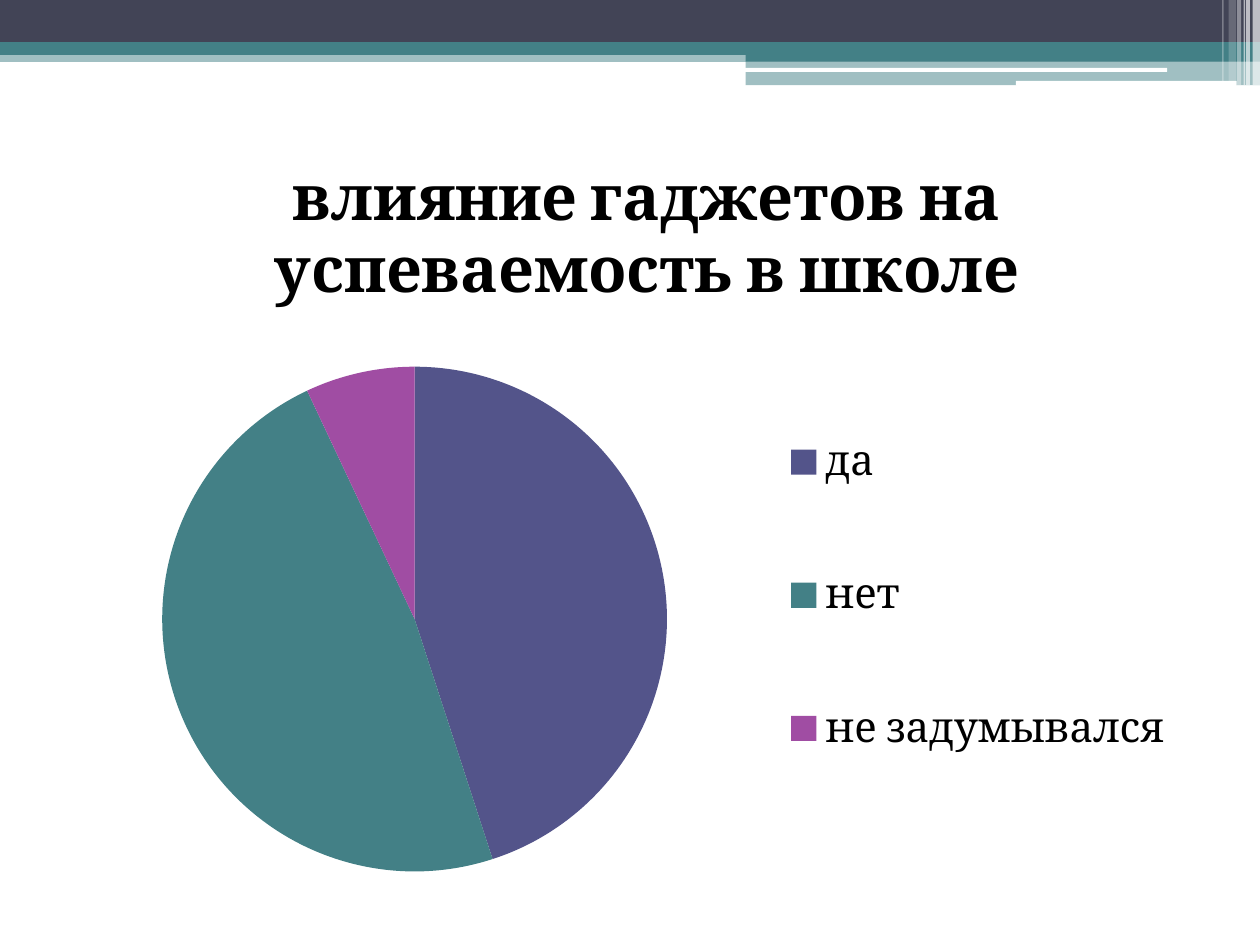
import pptx
import pptx.chart.data
import pptx.dml.color
import pptx.enum.chart
import pptx.enum.shapes
import pptx.oxml
import pptx.oxml.ns
import pptx.util

Cm = pptx.util.Cm
Pt = pptx.util.Pt
RGBColor = pptx.dml.color.RGBColor
qn = pptx.oxml.ns.qn
RECTANGLE = pptx.enum.shapes.MSO_SHAPE.RECTANGLE
ROUNDED = pptx.enum.shapes.MSO_SHAPE.ROUNDED_RECTANGLE

WHITE = RGBColor(0xFF, 0xFF, 0xFF)
BLACK = RGBColor(0x00, 0x00, 0x00)
SLATE = RGBColor(0x42, 0x44, 0x56)
TEAL = RGBColor(0x43, 0x80, 0x86)
INDIGO = RGBColor(0x53, 0x54, 0x8A)
PURPLE = RGBColor(0xA0, 0x4D, 0xA3)

WIDTH, HEIGHT = 25.4, 19.05
HALF_LEFT = 15.03
HALF_WIDTH = WIDTH - HALF_LEFT

# left, top, width, height (cm), colour, opacity in percent
BANDS = [
    (0, 1.02, WIDTH, 0.23, TEAL, 50),
    (0, 0, WIDTH, 0.86, SLATE, 100),
    (0, 0.85, WIDTH, 0.26, TEAL, 100),
    (HALF_LEFT, 0.99, HALF_WIDTH, 0.25, TEAL, 100),
    (HALF_LEFT, 1.23, HALF_WIDTH, 0.49, TEAL, 50),
]
WHITE_LINES = [(15.01, 1.37, 8.52, 0.08), (20.48, 1.63, 4.45, 0.1)]
# left, width, height (cm), opacity in percent
STRIPES = [
    (25.25, 0.15, 1.72, 65),
    (25.12, 0.08, 1.72, 65),
    (25.07, 0.03, 1.72, 60),
    (24.94, 0.08, 1.72, 40),
    (24.77, 0.15, 1.63, 20),
    (24.64, 0.03, 1.63, 30),
]

TITLE = "влияние гаджетов на успеваемость в школе"
ANSWERS = [("да", 45, INDIGO), ("нет", 48, TEAL), ("не задумывался", 7, PURPLE)]


def set_format(font, **values):
    for name, value in values.items():
        if name == "color":
            font.color.rgb = value
        else:
            setattr(font, name, value)


def set_layout(parent, position, **values):
    """Place a chart part, in fractions of the chart frame."""
    for layout in parent.findall(qn("c:layout")):
        parent.remove(layout)
    children = "".join(f'<c:{name} val="{value}"/>' for name, value in values.items())
    namespace = pptx.oxml.ns.nsdecls("c")
    parent.insert(position, pptx.oxml.parse_xml(
        f"<c:layout {namespace}><c:manualLayout>{children}</c:manualLayout></c:layout>"))


class SlideBuilder:
    font_name = "Cambria"
    edges = {"xMode": "edge", "yMode": "edge"}

    def __init__(self, slide):
        self.slide = slide

    def bar(self, left, top, width, height, color, opacity=100, kind=RECTANGLE):
        shape = self.slide.shapes.add_shape(
            kind, Cm(left), Cm(top), Cm(width), Cm(height))
        shape.shadow.inherit = False
        shape.line.fill.background()
        shape.fill.solid()
        shape.fill.fore_color.rgb = color
        if opacity < 100:
            fill_color = shape._element.spPr.find(".//" + qn("a:srgbClr"))
            alpha = pptx.oxml.parse_xml(
                f'<a:alpha {pptx.oxml.ns.nsdecls("a")} val="{opacity * 1000}"/>')
            fill_color.append(alpha)

    def pie(self, left, top, width, height, title, answers):
        data = pptx.chart.data.CategoryChartData()
        data.categories = [name for name, _, _ in answers]
        data.add_series(title, [value for _, value, _ in answers])
        chart = self.slide.shapes.add_chart(
            pptx.enum.chart.XL_CHART_TYPE.PIE,
            Cm(left), Cm(top), Cm(width), Cm(height), data).chart
        base = {"name": self.font_name, "color": BLACK}
        set_format(chart.font, size=Pt(10), **base)

        chart.has_title = True
        chart.chart_title.include_in_layout = False
        run = chart.chart_title.text_frame.paragraphs[0].add_run()
        run.text = title
        set_format(run.font, size=Pt(36), bold=True, **base)
        set_layout(chart.chart_title._element, 1, **self.edges, x=0.2, y=0)

        chart.has_legend = True
        legend = chart.legend
        legend.position = pptx.enum.chart.XL_LEGEND_POSITION.RIGHT
        legend.include_in_layout = False
        set_format(legend.font, size=Pt(24), **base)
        set_layout(legend._element, 1, **self.edges, x=0.62, y=0.28, w=0.36, h=0.65)

        plot = chart.plots[0]
        plot.vary_by_categories = True
        for index, (_, _, color) in enumerate(answers):
            fill = plot.series[0].points[index].format.fill
            fill.solid()
            fill.fore_color.rgb = color
        plot_area = chart._chartSpace.find(".//" + qn("c:plotArea"))
        set_layout(plot_area, 0, layoutTarget="inner", **self.edges,
                   x=0.115, y=0.298, w=0.424, h=0.678)


def main():
    presentation = pptx.Presentation()
    presentation.slide_width = Cm(WIDTH)
    presentation.slide_height = Cm(HEIGHT)
    slide = presentation.slides.add_slide(presentation.slide_layouts[6])
    builder = SlideBuilder(slide)

    for band in BANDS:
        builder.bar(*band)
    for line in WHITE_LINES:
        builder.bar(*line, WHITE, kind=ROUNDED)
    for left, width, height, opacity in STRIPES:
        builder.bar(left, 0, width, height, WHITE, opacity)
    builder.pie(0.51, 2.92, 24, 15.01, TITLE, ANSWERS)

    presentation.save("out.pptx")


if __name__ == "__main__":
    main()
